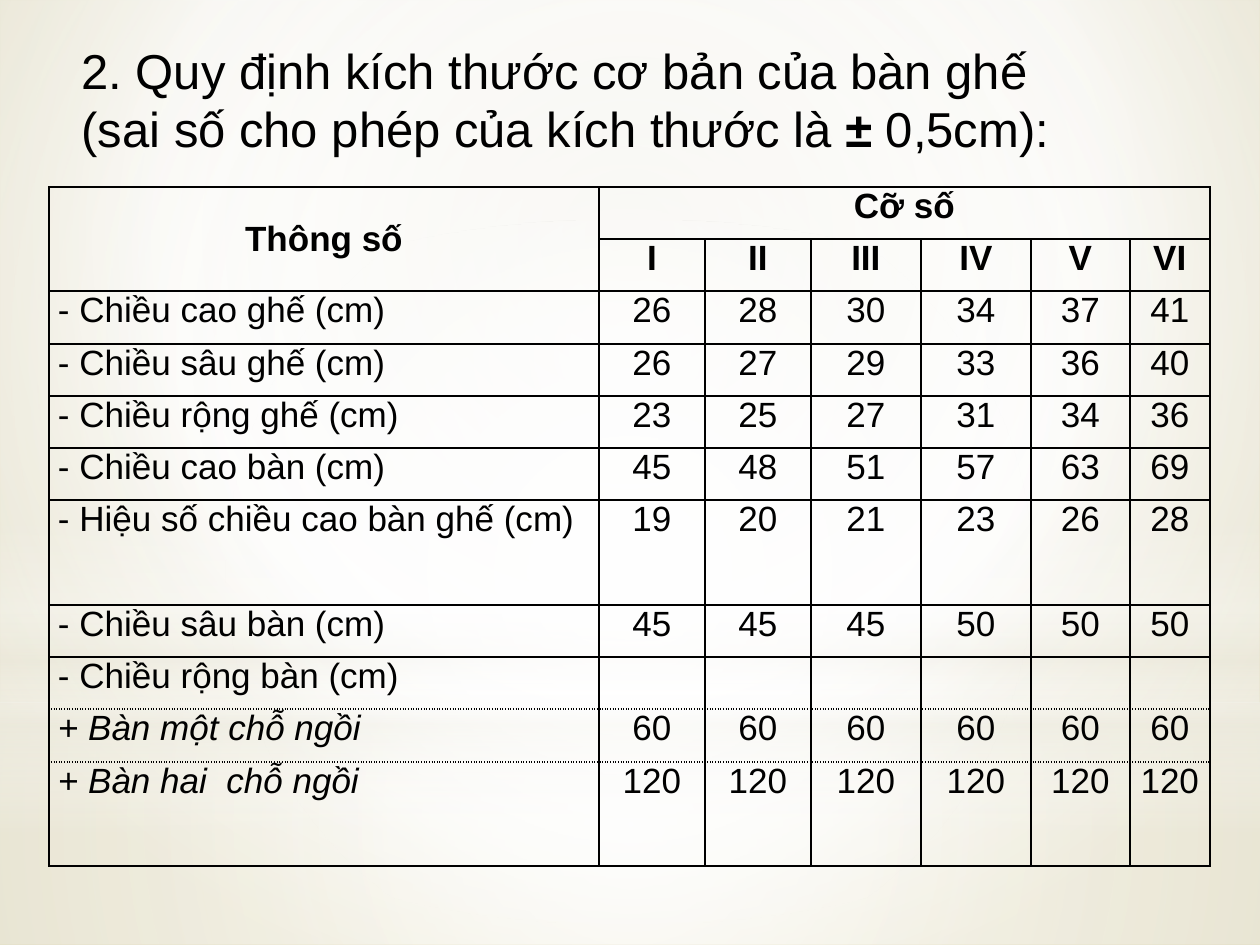
from itertools import accumulate

from pptx import Presentation
from pptx.dml.color import RGBColor
from pptx.enum.shapes import MSO_SHAPE
from pptx.enum.text import MSO_ANCHOR, MSO_AUTO_SIZE, PP_ALIGN
from pptx.oxml import parse_xml
from pptx.oxml.ns import nsdecls
from pptx.util import Emu, Pt

RECT, OVAL = MSO_SHAPE.RECTANGLE, MSO_SHAPE.OVAL
TOP, MIDDLE = MSO_ANCHOR.TOP, MSO_ANCHOR.MIDDLE
LEFT, CENTER, JUSTIFY = PP_ALIGN.LEFT, PP_ALIGN.CENTER, PP_ALIGN.JUSTIFY

SCALE = 914400 / 126
WIDTH, HEIGHT = 1260, 945
FONT = "Arial"
COLORS = {"ink": "000000", "white": "FFFFFF", "cream": "EEECE1",
          "sand": "E7E4D4", "khaki": "D5CC9F"}

TITLE = [("2. Quy định kích thước cơ bản của bàn ghế "
          "(sai số cho phép của kích thước là ", False),
         ("± ", True), ("0,5cm):", False)]
SIZES = ["I", "II", "III", "IV", "V", "VI"]
ROWS = [
    ("- Chiều cao ghế (cm)", [26, 28, 30, 34, 37, 41]),
    ("- Chiều sâu ghế (cm)", [26, 27, 29, 33, 36, 40]),
    ("- Chiều rộng ghế (cm)", [23, 25, 27, 31, 34, 36]),
    ("- Chiều cao bàn (cm)", [45, 48, 51, 57, 63, 69]),
    ("- Hiệu số chiều cao bàn ghế (cm)", [19, 20, 21, 23, 26, 28]),
    ("- Chiều sâu bàn (cm)", [45, 45, 45, 50, 50, 50]),
    ("- Chiều rộng bàn (cm)", [""] * 6),
    ("+ Bàn một chỗ ngồi", [60] * 6),
    ("+ Bàn hai  chỗ ngồi", [120] * 6),
]
COL_WIDTHS = [550, 106, 106, 110, 110, 99, 80]
ROW_UNITS = [1, 1, 1, 1, 1, 1, 2, 1, 1, 1, 2]
DOTTED_BELOW = {8, 9}  # grid rows parted by a dotted line

CENTERED = (50, 50, 50, 50)
# shape, box, stops (position, colour, opacity), fill-to rectangle or None if linear
GLOWS = [
    (RECT, (0, 703, WIDTH, 242),
     [(0, "white", 91), (37, "white", 76), (100, "cream", 79)], CENTERED),
    (RECT, (0, 0, WIDTH, 703),
     [(0, "white", 89), (48, "white", 62), (100, "cream", 79)], CENTERED),
    (RECT, (0, 519, WIDTH, 315),
     [(0, "white", 0), (29, "white", 30), (45, "cream", 40),
      (55, "white", 26), (65, "cream", 60), (100, "white", 0)], None),
    (OVAL, (0, 220, WIDTH, 703),
     [(0, "white", 100), (56, "white", 0)], CENTERED),
]


def px(n):
    return Emu(round(n * SCALE))


def set_format(obj, values):
    for name, value in values.items():
        setattr(obj, name, value)


def add_run(p, text, size, bold=False, italic=False):
    r = p.add_run()
    r.text = text
    set_format(r.font, {"name": FONT, "size": Pt(size), "bold": bold, "italic": italic})
    r.font.color.rgb = RGBColor.from_string(COLORS["ink"])


def set_gradient(owner, fill, stops, rect):
    """Fill with a circular gradient around rect, or a vertical one without it."""
    fill.gradient()
    gs = "".join(
        f'<a:gs pos="{pos * 1000}"><a:srgbClr val="{COLORS[color]}">'
        f'<a:alpha val="{opacity * 1000}"/></a:srgbClr></a:gs>'
        for pos, color, opacity in stops)
    if rect:
        sides = " ".join(f'{k}="{v * 1000}"' for k, v in zip("ltrb", rect))
        shade = f'<a:path path="circle"><a:fillToRect {sides}/></a:path>'
    else:
        shade = '<a:lin ang="5400000" scaled="0"/>'
    old = owner._element.xpath(".//a:gradFill")[0]
    old.getparent().replace(old, parse_xml(
        f'<a:gradFill {nsdecls("a")} rotWithShape="1">'
        f'<a:gsLst>{gs}</a:gsLst>{shade}</a:gradFill>'))


def add_backdrop(slide):
    set_gradient(slide, slide.background.fill,
                 [(0, "sand", 100), (60, "white", 100), (100, "khaki", 100)],
                 (20, 10, 20, 60))
    for kind, box, stops, rect in GLOWS:
        s = slide.shapes.add_shape(kind, *map(px, box))
        s.shadow.inherit = False
        s.line.fill.background()
        set_gradient(s, s.fill, stops, rect)


def add_title(slide, box):
    title = slide.shapes.title
    set_format(title, dict(zip(("left", "top", "width", "height"), map(px, box))))
    tf = title.text_frame
    set_format(tf, {"word_wrap": True, "auto_size": MSO_AUTO_SIZE.NONE,
                    "vertical_anchor": TOP, "margin_top": px(11)})
    p = tf.paragraphs[0]
    p.alignment = LEFT
    for text, bold in TITLE:
        add_run(p, text, 28, bold)
    slide.shapes._spTree.append(title._element)  # in front of the backdrop


def set_borders(cell, row):
    dots = {"T": row - 1 in DOTTED_BELOW, "B": row in DOTTED_BELOW}
    tcPr = cell._tc.get_or_add_tcPr()
    for i, side in enumerate("LRTB"):
        dash = "sysDot" if dots.get(side) else "solid"
        tcPr.insert(i, parse_xml(
            f'<a:ln{side} {nsdecls("a")} w="12700"><a:solidFill>'
            f'<a:srgbClr val="{COLORS["ink"]}"/></a:solidFill>'
            f'<a:prstDash val="{dash}"/></a:ln{side}>'))


def add_size_table(slide, box):
    left, top, width, height = box
    grid = [["Thông số", "Cỡ số"] + [""] * 5, [""] + SIZES]
    grid += [[label, *values] for label, values in ROWS]
    table = slide.shapes.add_table(len(grid), len(COL_WIDTHS), *map(px, box)).table
    set_format(table, {"first_row": False, "horz_banding": False})
    for col, w in zip(table.columns, COL_WIDTHS):
        col.width = px(w)
    edges = [round(height * n / sum(ROW_UNITS))
             for n in accumulate(ROW_UNITS, initial=0)]
    for row, start, end in zip(table.rows, edges, edges[1:]):
        row.height = px(end - start)
    table.cell(0, 0).merge(table.cell(1, 0))
    table.cell(0, 1).merge(table.cell(0, 6))

    for r, values in enumerate(grid):
        for c, value in enumerate(values):
            cell = table.cell(r, c)
            set_format(cell, {"margin_left": px(9), "margin_right": px(9),
                              "margin_top": 0, "margin_bottom": 0,
                              "vertical_anchor": MIDDLE if r == c == 0 else TOP})
            cell.fill.background()
            set_borders(cell, r)
            text = str(value)
            if text:
                p = cell.text_frame.paragraphs[0]
                p.alignment = JUSTIFY if c == 0 and r > 1 else CENTER
                add_run(p, text, 20, bold=r < 2, italic=text.startswith("+"))


def main():
    prs = Presentation()
    set_format(prs, {"slide_width": px(WIDTH), "slide_height": px(HEIGHT)})
    slide = prs.slides.add_slide(prs.slide_layouts[5])
    add_backdrop(slide)
    add_size_table(slide, (49, 187, sum(COL_WIDTHS), 679))
    add_title(slide, (69, 29, 1053, 318))
    prs.save("out.pptx")


if __name__ == "__main__":
    main()
